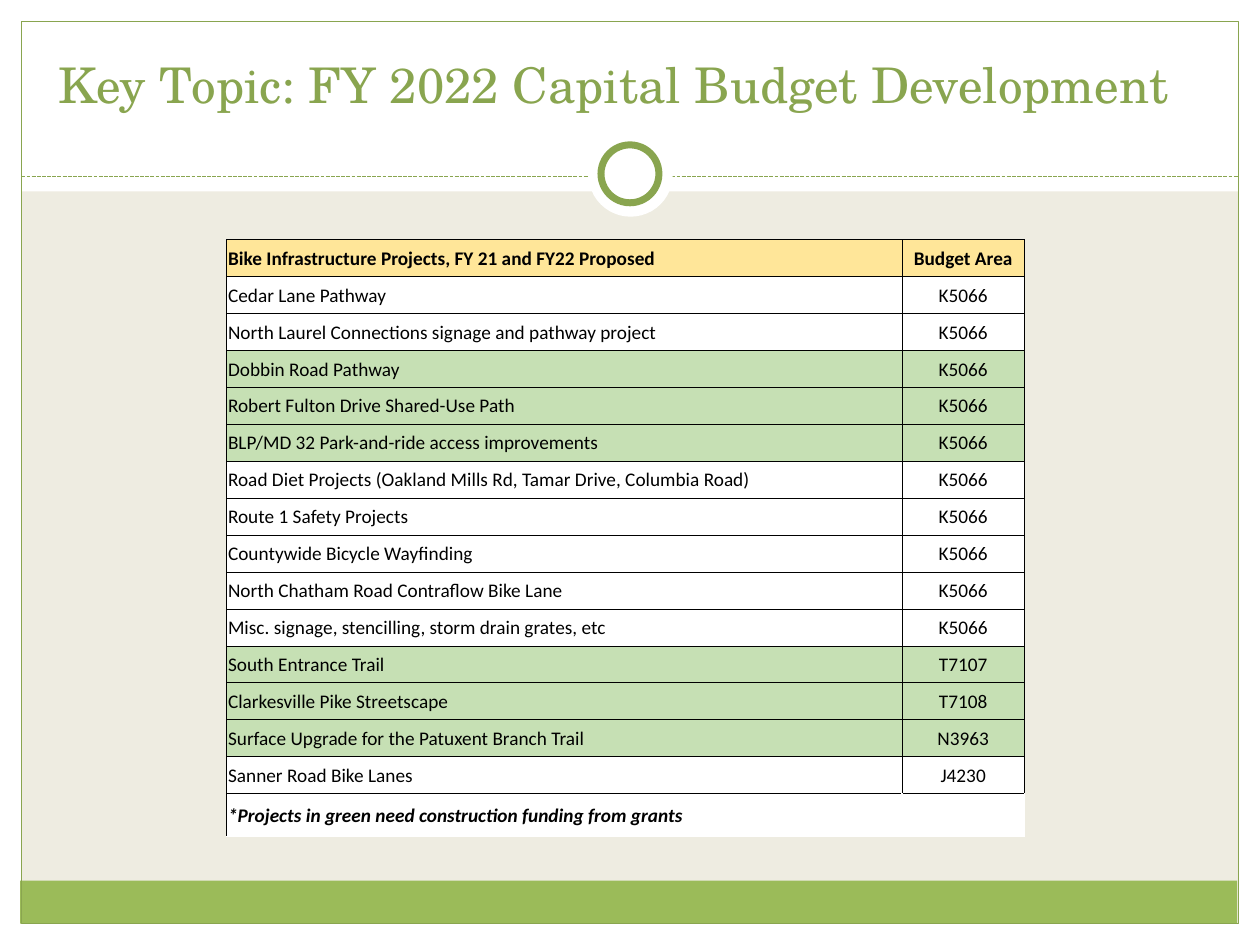
"""Build the capital budget slide with its table of bike infrastructure projects."""
from lxml.etree import SubElement
from pptx import Presentation
from pptx.dml.color import RGBColor
from pptx.enum.dml import MSO_LINE
from pptx.enum.shapes import MSO_CONNECTOR, MSO_SHAPE
from pptx.enum.text import MSO_ANCHOR, PP_ALIGN
from pptx.oxml.ns import qn
from pptx.util import Inches, Pt

COLORS = {
    "background": "EEECE1", "white": "FFFFFF", "band": "9BBB59", "accent": "89A54F",
    "header": "FFE699", "grant": "C6E0B4", "black": "000000",
}
ROWS = [
    ("Bike Infrastructure Projects, FY 21 and FY22 Proposed", "Budget Area", "header"),
    ("Cedar Lane Pathway", "K5066", "white"),
    ("North Laurel Connections signage and pathway project", "K5066", "white"),
    ("Dobbin Road Pathway", "K5066", "grant"),
    ("Robert Fulton Drive Shared-Use Path", "K5066", "grant"),
    ("BLP/MD 32 Park-and-ride access improvements", "K5066", "grant"),
    ("Road Diet Projects (Oakland Mills Rd, Tamar Drive, Columbia Road)", "K5066", "white"),
    ("Route 1 Safety Projects", "K5066", "white"),
    ("Countywide Bicycle Wayfinding", "K5066", "white"),
    ("North Chatham Road Contraflow Bike Lane", "K5066", "white"),
    ("Misc. signage, stencilling, storm drain grates, etc", "K5066", "white"),
    ("South Entrance Trail", "T7107", "grant"),
    ("Clarkesville Pike Streetscape", "T7108", "grant"),
    ("Surface Upgrade for the Patuxent Branch Trail", "N3963", "grant"),
    ("Sanner Road Bike Lanes", "J4230", "white"),
    ("*Projects in green need construction funding from grants", "", "white"),
]
RECTANGLE, OVAL = MSO_SHAPE.RECTANGLE, MSO_SHAPE.OVAL
SHAPES = [
    (RECTANGLE, (0, 7.33, 10, 0.17), "white", None),
    (RECTANGLE, (0, 0, 10, 1.52), "white", None),
    (RECTANGLE, (0, 0, 0.17, 7.5), "white", None),
    (RECTANGLE, (9.83, 0, 0.17, 7.5), "white", None),
    (RECTANGLE, (0.16, 6.99, 9.66, 0.34), "band", None),
    (RECTANGLE, (0.17, 0.17, 9.66, 7.16), None, 0.75),
    (OVAL, (4.67, 1.05, 0.67, 0.67), "white", None),
    (OVAL, (4.77, 1.15, 0.46, 0.46), "white", 4),
]
DIVIDER_POSITION = 6


def color(name):
    return RGBColor.from_string(COLORS[name])


def apply_format(target, values):
    for name, value in values.items():
        setattr(target, name, value)


presentation = Presentation()
apply_format(presentation, {"slide_width": Inches(10), "slide_height": Inches(7.5)})
slide = presentation.slides.add_slide(presentation.slide_layouts[6])
slide.background.fill.solid()
slide.background.fill.fore_color.rgb = color("background")

for position, (kind, box, fill, line_width) in enumerate(SHAPES):
    if position == DIVIDER_POSITION:
        divider = slide.shapes.add_connector(
            MSO_CONNECTOR.STRAIGHT, Inches(0.17), Inches(1.4), Inches(9.83), Inches(1.4)
        )
        divider.line.color.rgb = color("accent")
        apply_format(divider.line, {"width": Pt(0.75), "dash_style": MSO_LINE.SQUARE_DOT})
        SubElement(divider.line._get_or_add_ln().getparent(), qn("a:effectLst"))
    shape = slide.shapes.add_shape(kind, *map(Inches, box))
    shape.shadow.inherit = False
    if fill:
        shape.fill.solid()
        shape.fill.fore_color.rgb = color(fill)
    else:
        shape.fill.background()
    if line_width:
        shape.line.color.rgb = color("accent")
        shape.line.width = Pt(line_width)
    else:
        shape.line.fill.background()

title = slide.shapes.add_textbox(Inches(0.34), Inches(0.12), Inches(9.33), Inches(0.83))
apply_format(title.text_frame, {
    "word_wrap": True, "vertical_anchor": MSO_ANCHOR.BOTTOM,
    "margin_left": Inches(0.05), "margin_right": Inches(0.32),
})
paragraph = title.text_frame.paragraphs[0]
paragraph.alignment = PP_ALIGN.CENTER
run = paragraph.add_run()
run.text = "Key Topic: FY 2022 Capital Budget Development"
apply_format(run.font, {"name": "TeX Gyre Schola", "size": Pt(28.1)})
run.font.color.rgb = color("accent")

table = slide.shapes.add_table(
    len(ROWS), 2, Inches(1.8), Inches(1.9), Inches(6.33), Inches(4.74)
).table
apply_format(table, {"first_row": False, "horz_banding": False})
for column, width in zip(table.columns, (5.36, 0.97)):
    column.width = Inches(width)

last_row = len(ROWS) - 1
for row_index, (project, budget_area, fill) in enumerate(ROWS):
    is_note = row_index == last_row
    table.rows[row_index].height = Inches(0.34) if is_note else Inches(4.4 / last_row)
    for column_index, text in enumerate((project, budget_area)):
        cell = table.cell(row_index, column_index)
        apply_format(cell, {
            "vertical_anchor": MSO_ANCHOR.MIDDLE, "margin_left": Inches(0.01),
            "margin_right": Inches(0.01), "margin_top": Inches(0.01), "margin_bottom": 0,
        })
        sides = ("LT", "T")[column_index] if is_note else "LRTB"
        for side in sides:
            border = SubElement(cell._tc.get_or_add_tcPr(), qn(f"a:ln{side}"), w=str(Pt(0.5)))
            border_fill = SubElement(border, qn("a:solidFill"))
            SubElement(border_fill, qn("a:srgbClr"), val=COLORS["black"])
        cell.fill.solid()
        cell.fill.fore_color.rgb = color(fill)
        if text:
            paragraph = cell.text_frame.paragraphs[0]
            paragraph.alignment = PP_ALIGN.CENTER if column_index else PP_ALIGN.LEFT
            run = paragraph.add_run()
            run.text = text
            apply_format(run.font, {
                "name": "Calibri", "size": Pt(11),
                "bold": row_index in (0, last_row), "italic": is_note,
            })
            run.font.color.rgb = color("black")

presentation.save("out.pptx")
